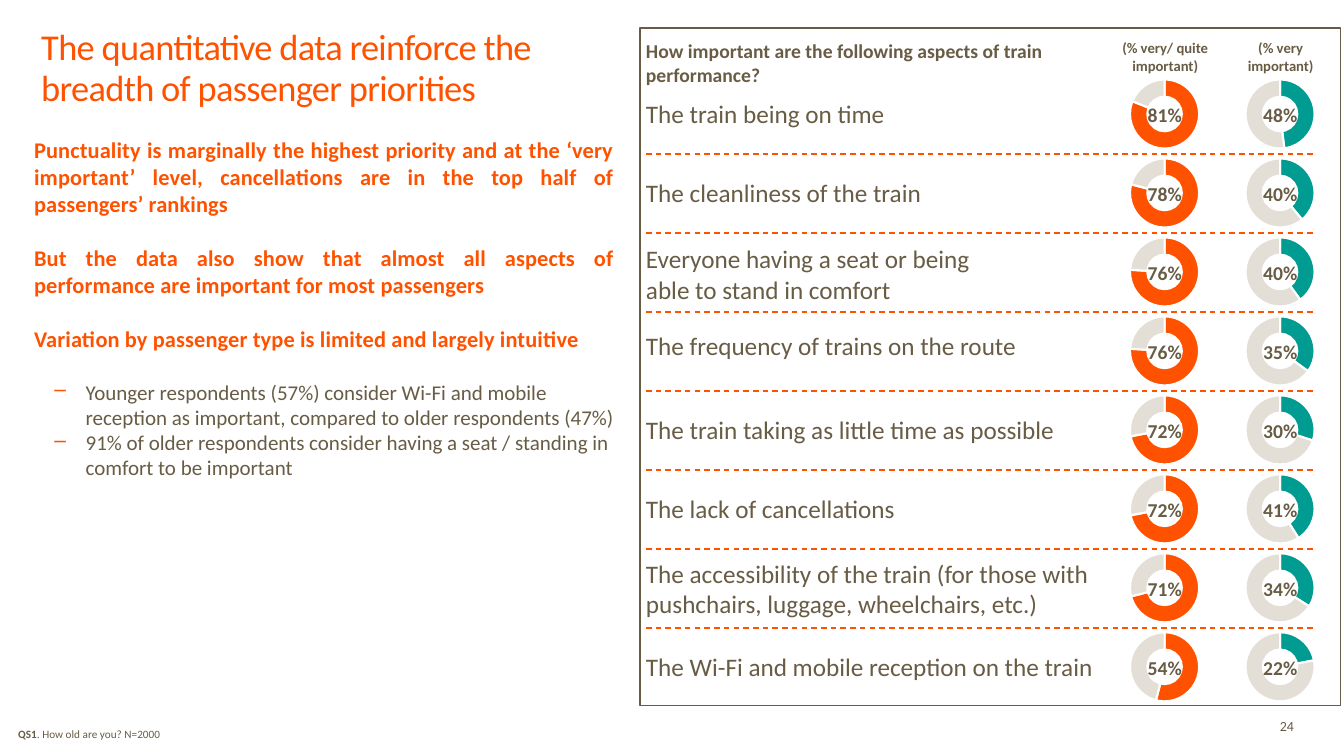
"""Build the slide on passenger priorities for train performance."""
from dataclasses import dataclass
from typing import NamedTuple

from lxml.etree import SubElement
from pptx import Presentation
from pptx.chart.data import CategoryChartData
from pptx.dml.color import RGBColor
from pptx.enum.chart import XL_CHART_TYPE as ChartType
from pptx.enum.dml import MSO_LINE_DASH_STYLE as Dash
from pptx.enum.shapes import MSO_CONNECTOR_TYPE as ConnectorType, MSO_SHAPE as ShapeType
from pptx.enum.text import MSO_ANCHOR as Anchor, PP_ALIGN as Align
from pptx.oxml import parse_xml
from pptx.oxml.ns import nsdecls, qn
from pptx.slide import Slide
from pptx.text.text import _Paragraph as Paragraph
from pptx.util import Cm, Pt

FONT = "Calibri"
ORANGE, TEAL, BROWN, GREY, WHITE = "FF5200", "009B91", "685C45", "E4DFD6", "FFFFFF"
ROW_PITCH = 1.99
LABEL_LEFT = 16.28
BODY_GAP = 19.5


class Box(NamedTuple):
    left: float
    top: float
    width: float
    height: float


class Column(NamedTuple):
    left: float
    color: str
    header: str


@dataclass
class Aspect:
    label: str
    shown: tuple[int, int]
    rings: tuple[int, int] | None = None
    lift: float = 0
    width: float = 11.71


@dataclass
class Style:
    size: float
    color: str = BROWN
    bold: bool = False
    align: Align = Align.LEFT
    tracking: int = 0
    line_spacing: float | None = None
    space_before: float = 0
    bullet: bool = False


COLUMNS = [
    Column(27.79, ORANGE, "(% very/ quite important)"),
    Column(30.7, TEAL, "(% very\nimportant)"),
]
ASPECTS = [
    Aspect("The train being on time", (81, 48)),
    Aspect("The cleanliness of the train", (78, 40), rings=(79, 39)),
    Aspect("Everyone having a seat or being able to stand in comfort", (76, 40), lift=0.33, width=8.26),
    Aspect("The frequency of trains on the route", (76, 35), lift=0.13),
    Aspect("The train taking as little time as possible", (72, 30)),
    Aspect("The lack of cancellations", (72, 41)),
    Aspect("The accessibility of the train (for those with pushchairs, luggage, wheelchairs, etc.)",
           (71, 34), lift=0.36),
    Aspect("The Wi-Fi and mobile reception on the train", (54, 22)),
]
FINDINGS = [
    "Punctuality is marginally the highest priority and at the ‘very important’ level, "
    "cancellations are in the top half of passengers’ rankings",
    "But the data also show that almost all aspects of performance are important for most passengers",
    "Variation by passenger type is limited and largely intuitive",
]
DETAILS = [
    "Younger respondents (57%) consider Wi-Fi and mobile reception as important, "
    "compared to older respondents (47%)",
    "91% of older respondents consider having a seat / standing in comfort to be important",
]


def rgb(color: str) -> RGBColor:
    return RGBColor.from_string(color)


def lengths(box: Box) -> list[Cm]:
    return [Cm(value) for value in box]


def add_bullet(paragraph: Paragraph) -> None:
    properties = paragraph._p.get_or_add_pPr()
    properties.set("marL", str(Cm(1.3)))
    properties.set("indent", str(-Cm(0.79)))
    SubElement(SubElement(properties, qn("a:buClr")), qn("a:srgbClr")).set("val", ORANGE)
    SubElement(properties, qn("a:buChar")).set("char", "–")


def style_paragraph(paragraph: Paragraph, style: Style) -> None:
    paragraph.alignment = style.align
    if style.line_spacing:
        paragraph.line_spacing = Pt(style.line_spacing)
    if style.space_before:
        paragraph.space_before = Pt(style.space_before)
    if style.bullet:
        add_bullet(paragraph)
    font = paragraph.font
    font.name, font.size, font.bold = FONT, Pt(style.size), style.bold
    font.color.rgb = rgb(style.color)
    if style.tracking:
        font._rPr.set("spc", str(style.tracking))


def add_text(slide: Slide, box: Box, items: list[tuple[str, Style]], anchor: Anchor = Anchor.TOP) -> list[Paragraph]:
    frame = slide.shapes.add_textbox(*lengths(box)).text_frame
    frame.word_wrap = True
    frame.vertical_anchor = anchor
    frame.margin_left = frame.margin_top = frame.margin_right = frame.margin_bottom = 0
    frame.text = "\n".join(text for text, _ in items)
    for paragraph, (_, style) in zip(frame.paragraphs, items):
        style_paragraph(paragraph, style)
    return list(frame.paragraphs)


def add_ring(slide: Slide, box: Box, share: int, color: str) -> None:
    data = CategoryChartData()
    data.categories = ["1", "2"]
    data.add_series("Series 1", (share, 100 - share))
    chart = slide.shapes.add_chart(ChartType.DOUGHNUT, *lengths(box), data).chart
    chart.has_title = chart.has_legend = False
    chart.font.name, chart.font.size = FONT, Pt(10)
    chart.font.color.rgb = rgb(BROWN)
    plot = chart.plots[0]
    plot.has_data_labels = False
    plot._element.find(qn("c:holeSize")).set("val", "65")
    for index, fill in enumerate((color, GREY)):
        part = plot.series[0].points[index].format
        part.fill.solid()
        part.fill.fore_color.rgb = rgb(fill)
        part.line.color.rgb = rgb(WHITE)
        part.line.width = Pt(1.5)
    chart_element = chart._chartSpace.find(qn("c:chart"))
    chart_element.addnext(parse_xml(
        f"<c:spPr {nsdecls('c', 'a')}><a:noFill/><a:ln><a:noFill/></a:ln></c:spPr>"))
    plot_area = chart_element.find(qn("c:plotArea"))
    for layout in plot_area.findall(qn("c:layout")):
        plot_area.remove(layout)
    layout = parse_xml(f"<c:layout {nsdecls('c')}><c:manualLayout/></c:layout>")
    settings = {"layoutTarget": "inner", "xMode": "edge", "yMode": "edge",
                "x": "0.22", "y": "0.15", "w": "0.56", "h": "0.7"}
    for name, value in settings.items():
        SubElement(layout[0], qn(f"c:{name}")).set("val", value)
    plot_area.insert(0, layout)


def add_divider(slide: Slide, top: float) -> None:
    line = slide.shapes.add_connector(ConnectorType.STRAIGHT, Cm(LABEL_LEFT), Cm(top), Cm(33.12), Cm(top))
    line.line.color.rgb = rgb(ORANGE)
    line.line.width = Pt(1)
    line.line.dash_style = Dash.DASH
    SubElement(line._element.spPr, qn("a:effectLst"))


def add_frame(slide: Slide) -> None:
    frame = slide.shapes.add_shape(ShapeType.RECTANGLE, *lengths(Box(16.13, 0.71, 17.65, 17.07)))
    frame.shadow.inherit = False
    frame.fill.background()
    frame.line.color.rgb = rgb(BROWN)
    frame.line.width = Pt(1)


def add_aspects(slide: Slide) -> None:
    label_style = Style(18)
    caption_style = Style(14, bold=True, align=Align.CENTER)
    header_style = Style(10.5, bold=True, align=Align.CENTER)
    add_text(slide, Box(LABEL_LEFT, 0.99, 11.63, 1.27),
             [("How important are the following aspects of train performance?", Style(14, bold=True))])
    for column in COLUMNS:
        add_text(slide, Box(column.left + 0.1, 0.99, 2.95, 1.09),
                 [(line, header_style) for line in column.header.split("\n")])
    for index, aspect in enumerate(ASPECTS):
        offset = index * ROW_PITCH
        add_text(slide, Box(LABEL_LEFT, 2.49 + offset - aspect.lift, aspect.width, 0.84),
                 [(aspect.label, label_style)])
        for column, share, shown in zip(COLUMNS, aspect.rings or aspect.shown, aspect.shown):
            add_ring(slide, Box(column.left, 1.63 + offset, 3.12, 2.49), share, column.color)
            add_text(slide, Box(column.left + 1.07, 2.6 + offset, 0.99, 0.84), [(f"{shown}%", caption_style)])
        if index:
            add_divider(slide, 1.89 + offset)


def add_findings(slide: Slide) -> None:
    items = [(text, Style(16, ORANGE, True, Align.JUSTIFY, 10, space_before=BODY_GAP if index else 0))
             for index, text in enumerate(FINDINGS)]
    items += [(text, Style(15, space_before=0 if index else BODY_GAP, bullet=True))
              for index, text in enumerate(DETAILS)]
    add_text(slide, Box(0.86, 3.43, 14.63, 14.15), items)


def main() -> None:
    presentation = Presentation()
    presentation.slide_width, presentation.slide_height = Cm(33.87), Cm(19.05)
    slide = presentation.slides.add_slide(presentation.slide_layouts[6])
    add_text(slide, Box(1.04, 0.71, 14.25, 2.03),
             [("The quantitative data reinforce the breadth of passenger priorities",
               Style(26, ORANGE, tracking=-50, line_spacing=29))], Anchor.BOTTOM)
    add_findings(slide)
    add_aspects(slide)
    add_frame(slide)
    note = add_text(slide, Box(0.46, 18.34, 13.97, 0.43), [("QS1", Style(8))])[0]
    note.runs[0].font.bold = True
    note.add_run().text = ". How old are you? N=2000"
    add_text(slide, Box(32, 18.01, 0.61, 0.56), [("24", Style(10, align=Align.RIGHT))], Anchor.MIDDLE)
    presentation.save("out.pptx")


if __name__ == "__main__":
    main()
